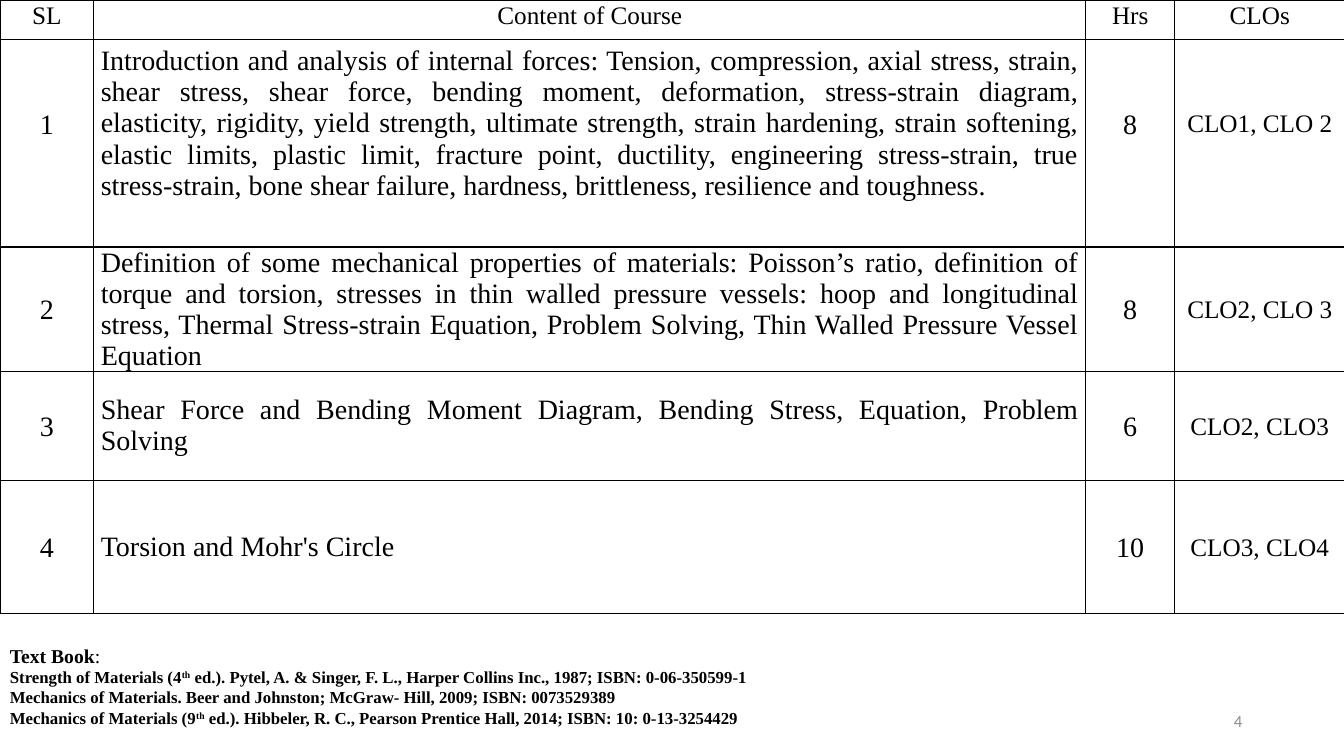
from lxml.etree import SubElement
from pptx import Presentation
from pptx.dml.color import RGBColor
from pptx.enum.text import MSO_ANCHOR as Anchor, PP_ALIGN as Align
from pptx.oxml.ns import qn
from pptx.util import Inches, Pt

BLACK = RGBColor(0, 0, 0)
GREY = RGBColor(0x8C, 0x8C, 0x8C)
SERIF = "Times New Roman"

HEADINGS = ("SL", "Content of Course", "Hrs", "CLOs")
TOPICS = [
    ("1", "Introduction and analysis of internal forces: Tension, compression, axial stress, strain, "
     "shear stress, shear force, bending moment, deformation, stress-strain diagram, elasticity, "
     "rigidity, yield strength, ultimate strength, strain hardening, strain softening, elastic limits, "
     "plastic limit, fracture point, ductility, engineering stress-strain, true stress-strain, "
     "bone shear failure, hardness, brittleness, resilience and toughness.", "8", "CLO1, CLO 2"),
    ("2", "Definition of some mechanical properties of materials: Poisson’s ratio, definition of "
     "torque and torsion, stresses in thin walled pressure vessels: hoop and longitudinal stress, "
     "Thermal Stress-strain Equation, Problem Solving, Thin Walled Pressure Vessel Equation",
     "8", "CLO2, CLO 3"),
    ("3", "Shear Force and Bending Moment Diagram, Bending Stress, Equation, Problem Solving",
     "6", "CLO2, CLO3"),
    ("4", "Torsion and Mohr's Circle", "10", "CLO3, CLO4"),
]
COLUMN_WIDTHS = (0.93, 9.84, 0.88, 1.69)
ROW_HEIGHTS = (0.39, 2.06, 1.21, 1.08, 1.32)
BOTTOM_MARGINS = (0, 0.39, 0, 0, 0)

BOOKS = [
    ("Strength of Materials (4", "th", " ed.). Pytel, A. & Singer, F. L., Harper Collins Inc., 1987; "
     "ISBN: 0-06-350599-1"),
    ("Mechanics of Materials. Beer and Johnston; McGraw- Hill, 2009; ISBN: 0073529389",),
    ("Mechanics of Materials (9", "th", " ed.). Hibbeler, R. C., Pearson Prentice Hall, 2014; "
     "ISBN: 10: 0-13-3254429"),
]


def style(font, size, name=SERIF, color=BLACK, bold=False):
    font.size, font.name, font.bold = Pt(size), name, bold
    font.color.rgb = color


def add_span(para, text, size, bold):
    span = para.add_run()
    span.text = text
    style(span.font, size, bold=bold)
    return span


def add_borders(cell):
    properties = cell._tc.get_or_add_tcPr()
    for side in ("a:lnL", "a:lnR", "a:lnT", "a:lnB"):
        line = SubElement(properties, qn(side), w=str(Pt(1)))
        fill = SubElement(line, qn("a:solidFill"))
        SubElement(fill, qn("a:srgbClr"), val=str(BLACK))


def fill_cell(cell, text, row, column):
    add_borders(cell)
    cell.fill.background()
    cell.margin_left = cell.margin_right = Inches(0.07)
    cell.margin_top = 0
    cell.margin_bottom = Inches(BOTTOM_MARGINS[row])
    cell.vertical_anchor = Anchor.MIDDLE if row else Anchor.TOP
    para = cell.text_frame.paragraphs[0]
    para.text = text
    if row and column == 1:
        para.alignment = Align.JUSTIFY
    else:
        para.alignment = Align.CENTER
        para.line_spacing = 1.07
    style(para.runs[0].font, 20 if row and column < 3 else 18)


def add_course_table(page):
    rows = [HEADINGS, *TOPICS]
    table = page.shapes.add_table(len(rows), len(HEADINGS), 0, 0, Inches(sum(COLUMN_WIDTHS)),
                                  Inches(sum(ROW_HEIGHTS))).table
    table.first_row = table.horz_banding = False
    for column, width in zip(table.columns, COLUMN_WIDTHS):
        column.width = Inches(width)
    for row, height in zip(table.rows, ROW_HEIGHTS):
        row.height = Inches(height)
    for row, texts in enumerate(rows):
        for column, text in enumerate(texts):
            fill_cell(table.cell(row, column), text, row, column)


def add_frame(page, *place):
    frame = page.shapes.add_textbox(*map(Inches, place)).text_frame
    frame.word_wrap = True
    frame.vertical_anchor = Anchor.MIDDLE
    return frame


def add_books(page):
    frame = add_frame(page, 0, 6.33, 13.16, 0.94)
    heading = frame.paragraphs[0]
    add_span(heading, "Text Book", 14, True)
    add_span(heading, ":", 14, False)
    for parts in BOOKS:
        para = frame.add_paragraph()
        for part in parts:
            span = add_span(para, part, 12, True)
            if part == "th":
                span._r.get_or_add_rPr().set("baseline", "30000")


def add_page_number(page):
    para = add_frame(page, 9.42, 6.95, 3, 0.4).paragraphs[0]
    para.text = "4"
    para.alignment = Align.RIGHT
    style(para.runs[0].font, 12, "Calibri", GREY)


def main():
    """Build the course content slide."""
    deck = Presentation()
    deck.slide_width, deck.slide_height = Inches(13.33), Inches(7.5)
    page = deck.slides.add_slide(deck.slide_layouts[6])
    add_course_table(page)
    add_books(page)
    add_page_number(page)
    deck.save("out.pptx")


if __name__ == "__main__":
    main()
